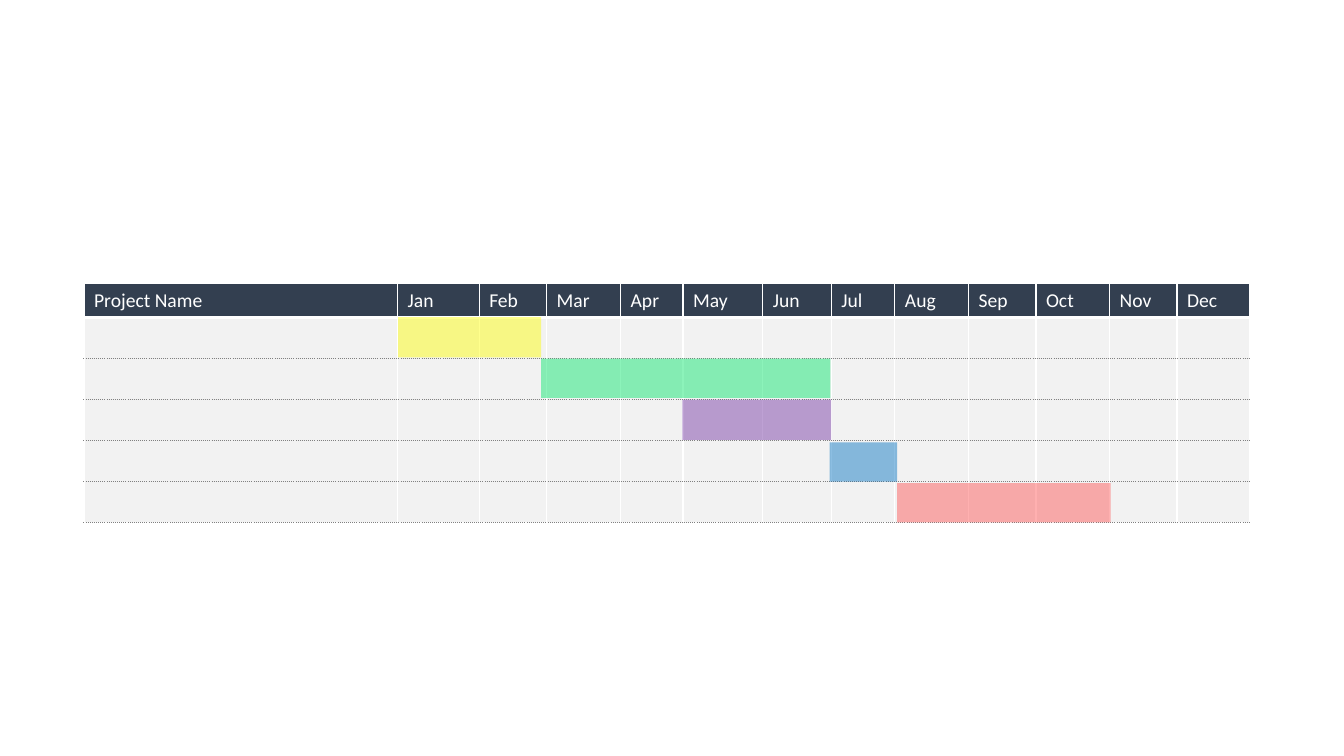
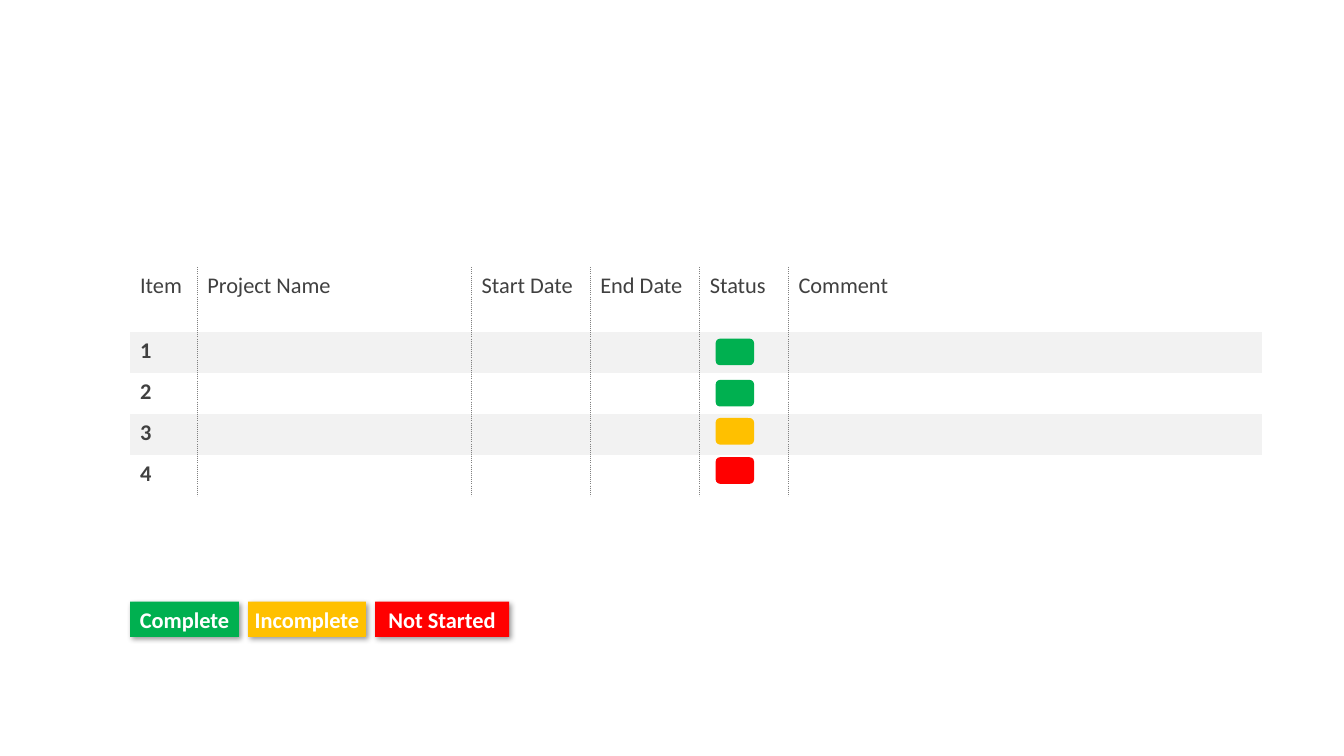
from dataclasses import dataclass
from typing import NamedTuple, Optional

from lxml.etree import SubElement
from pptx import Presentation
from pptx.dml.color import RGBColor
from pptx.enum.shapes import MSO_SHAPE
from pptx.enum.text import MSO_ANCHOR, PP_ALIGN
from pptx.oxml.ns import qn
from pptx.util import Pt


@dataclass(frozen=True)
class Theme:
    font: str = "Calibri"
    month_size: int = 14
    status_size: int = 16
    white: str = "FFFFFF"
    navy: str = "333F50"
    band: str = "F2F2F2"
    text: str = "404040"
    rule: str = "808080"
    complete: str = "00B050"
    incomplete: str = "FFC000"
    not_started: str = "FF0000"
    bar_opacity: int = 45


THEME = Theme()


class Line(NamedTuple):
    color: str
    width: float = 1
    dash: str = "solid"


class Borders(NamedTuple):
    left: Optional[Line] = None
    right: Optional[Line] = None
    top: Optional[Line] = None
    bottom: Optional[Line] = None


class Box(NamedTuple):
    left: float
    top: float
    width: float
    height: float


class Bar(NamedTuple):
    box: Box
    color: str


class LegendItem(NamedTuple):
    label: str
    width: float
    color: str


WHITE_LINE = Line(THEME.white)
HEADER_LINE = Line(THEME.white, 3)
DOTTED = Line(THEME.rule, 1, "sysDot")

ROW_HEIGHT = 29.3

MONTHS = ["Jan", "Feb", "Mar", "Apr", "May", "Jun",
          "Jul", "Aug", "Sep", "Oct", "Nov", "Dec"]
GANTT_WIDTHS = [224, 58.3, 48.2, 52.8, 44.6, 57, 49,
                45.4, 52.6, 48.2, 52.6, 48.2, 51.6]
GANTT_ROWS = 5
BARS = [
    Bar(Box(284.4, 226.6, 102.2, 28.8), "FFFF00"),
    Bar(Box(386.6, 256.1, 206.6, 28.1), "00E668"),
    Bar(Box(487.4, 285.4, 106.4, 28.8), "7030A0"),
    Bar(Box(592.6, 316, 48.2, 28.1), "0070C0"),
    Bar(Box(640.8, 345, 152.6, 28.1), "FF5050"),
]

STATUS_HEADERS = ["Item", "Project Name", "Start Date", "End Date", "Status", "Comment"]
STATUS_WIDTHS = [48, 196, 84.8, 78.2, 63.4, 338.4]
CHIPS = [
    (241.9, THEME.complete),
    (271.4, THEME.complete),
    (298.6, THEME.incomplete),
    (326.6, THEME.not_started),
]
LEGEND = [
    LegendItem("Complete", 77.8, THEME.complete),
    LegendItem("Incomplete", 84.2, THEME.incomplete),
    LegendItem("Not Started", 95.8, THEME.not_started),
]
TABLE_LEFT = 92.9
LEGEND_GAP = 6.5


def rgb(color: str) -> RGBColor:
    return RGBColor.from_string(color)


def style_text(p, text: str, size: float, color: str, bold: bool = False) -> None:
    p.text = text
    p.font.name = THEME.font
    p.font.size = Pt(size)
    p.font.bold = bold
    p.font.color.rgb = rgb(color)


def style_cell(cell, fill: str, borders: Borders) -> None:
    """Set borders before the fill, as the schema orders them."""
    tc_pr = cell._tc.get_or_add_tcPr()
    for tag, line in zip(("a:lnL", "a:lnR", "a:lnT", "a:lnB"), borders):
        ln = SubElement(tc_pr, qn(tag))
        if line is None:
            SubElement(ln, qn("a:noFill"))
            continue
        ln.set("w", str(Pt(line.width)))
        solid = SubElement(ln, qn("a:solidFill"))
        SubElement(solid, qn("a:srgbClr"), val=line.color)
        SubElement(ln, qn("a:prstDash"), val=line.dash)
    cell.fill.solid()
    cell.fill.fore_color.rgb = rgb(fill)


def add_grid(s, left: float, top: float, widths: list[float], heights: list[float]):
    """Add a table without the banded style."""
    table = s.shapes.add_table(len(heights), len(widths), Pt(left), Pt(top),
                               Pt(sum(widths)), Pt(sum(heights))).table
    table.first_row = table.horz_banding = False
    for column, width in zip(table.columns, widths):
        column.width = Pt(width)
    for row, height in zip(table.rows, heights):
        row.height = Pt(height)
    return table


def add_block(s, kind: MSO_SHAPE, box: Box, color: str):
    sp = s.shapes.add_shape(kind, *map(Pt, box))
    sp.shadow.inherit = False
    sp.fill.solid()
    sp.fill.fore_color.rgb = rgb(color)
    sp.line.fill.background()
    return sp


def set_opacity(sp, percent: int) -> None:
    color = sp._element.spPr.find(qn("a:solidFill"))[0]
    SubElement(color, qn("a:alpha"), val=str(percent * 1000))


def add_drop_shadow(sp) -> None:
    effects = sp._element.spPr.find(qn("a:effectLst"))
    shadow = SubElement(effects, qn("a:outerShdw"), blurRad=str(Pt(4)),
                        dist=str(Pt(2)), dir=str(45 * 60000),
                        algn="tl", rotWithShape="0")
    color = SubElement(shadow, qn("a:srgbClr"), val="000000")
    SubElement(color, qn("a:alpha"), val="40000")


def add_legend_item(s, left: float, item: LegendItem) -> None:
    sp = add_block(s, MSO_SHAPE.RECTANGLE, Box(left, 429.8, item.width, 25.2), item.color)
    add_drop_shadow(sp)
    tf = sp.text_frame
    tf.margin_left = tf.margin_right = tf.margin_top = tf.margin_bottom = 0
    tf.vertical_anchor = MSO_ANCHOR.MIDDLE
    p = tf.paragraphs[0]
    p.alignment = PP_ALIGN.CENTER
    style_text(p, item.label, THEME.status_size, THEME.white, bold=True)


def build_gantt(s) -> None:
    table = add_grid(s, 60, 202.5, GANTT_WIDTHS, [24.3] + [ROW_HEIGHT] * GANTT_ROWS)
    for col, label in enumerate(["Project Name"] + MONTHS):
        header = table.cell(0, col)
        style_text(header.text_frame.paragraphs[0], label, THEME.month_size, THEME.white)
        style_cell(header, THEME.navy,
                   Borders(WHITE_LINE, WHITE_LINE, WHITE_LINE, HEADER_LINE))
        for row in range(1, GANTT_ROWS + 1):
            top = HEADER_LINE if row == 1 else DOTTED
            style_cell(table.cell(row, col), THEME.band,
                       Borders(WHITE_LINE, WHITE_LINE, top, DOTTED))
    for bar in BARS:
        set_opacity(add_block(s, MSO_SHAPE.RECTANGLE, bar.box, bar.color),
                    THEME.bar_opacity)


def build_status(s) -> None:
    table = add_grid(s, TABLE_LEFT, 190.8, STATUS_WIDTHS,
                     [46.4] + [ROW_HEIGHT] * len(CHIPS))
    last = len(STATUS_HEADERS) - 1
    for col, label in enumerate(STATUS_HEADERS):
        borders = Borders(left=DOTTED if col > 0 else None,
                          right=DOTTED if col < last else None)
        style_text(table.cell(0, col).text_frame.paragraphs[0], label,
                   THEME.status_size, THEME.text)
        for row in range(len(CHIPS) + 1):
            style_cell(table.cell(row, col), THEME.band if row % 2 else THEME.white, borders)
    for row, (top, color) in enumerate(CHIPS, start=1):
        style_text(table.cell(row, 0).text_frame.paragraphs[0], str(row),
                   THEME.status_size, THEME.text, bold=True)
        add_block(s, MSO_SHAPE.ROUNDED_RECTANGLE, Box(511.2, top, 27.4, 19), color)
    left = TABLE_LEFT
    for item in LEGEND:
        add_legend_item(s, left, item)
        left += item.width + LEGEND_GAP


def main() -> None:
    prs = Presentation()
    prs.slide_width, prs.slide_height = Pt(960), Pt(540)
    blank = prs.slide_layouts[6]
    for build in (build_gantt, build_status):
        build(prs.slides.add_slide(blank))
    prs.save("out.pptx")


if __name__ == "__main__":
    main()
